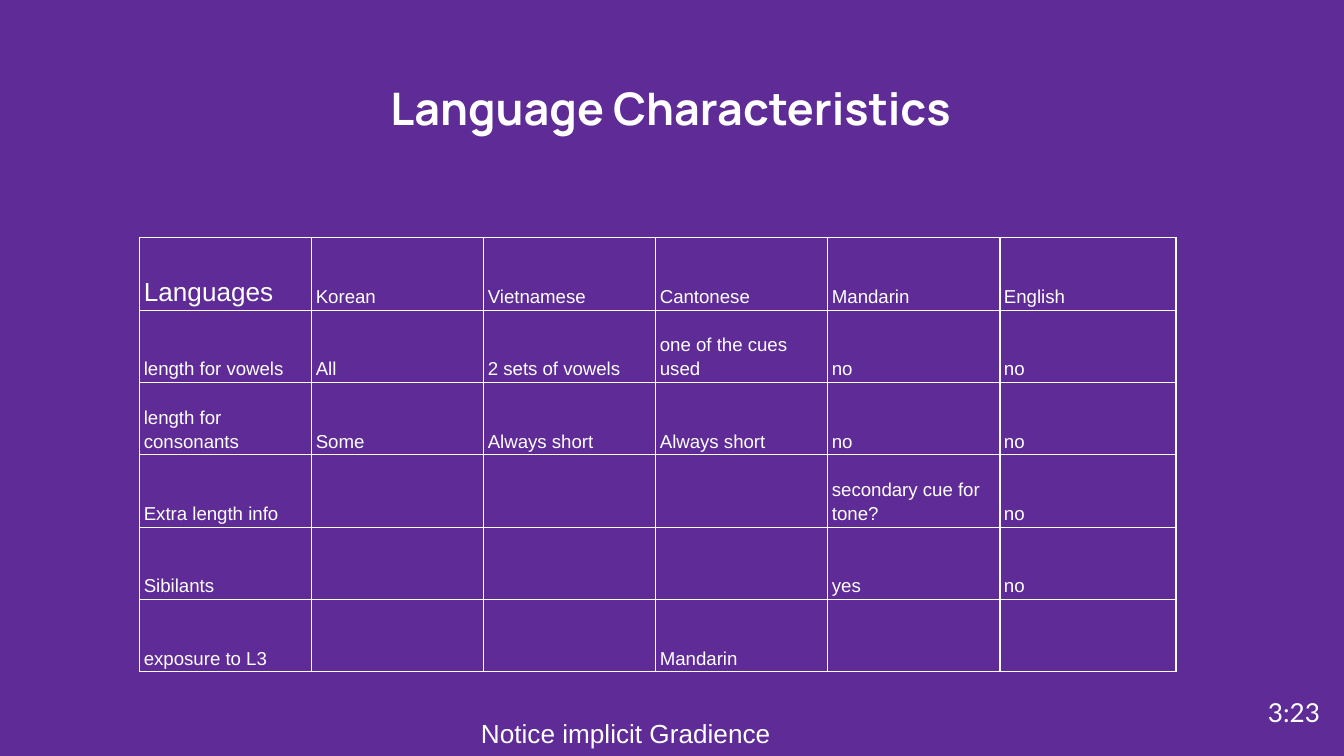
from lxml import etree
from pptx import Presentation
from pptx.dml.color import RGBColor
from pptx.enum.text import MSO_ANCHOR, PP_ALIGN
from pptx.oxml.ns import qn
from pptx.util import Inches, Pt

LEFT, CENTER, RIGHT = PP_ALIGN.LEFT, PP_ALIGN.CENTER, PP_ALIGN.RIGHT
TOP, MIDDLE, BOTTOM = MSO_ANCHOR.TOP, MSO_ANCHOR.MIDDLE, MSO_ANCHOR.BOTTOM
PURPLE, WHITE = "5E2B97", "FFFFFF"

ROWS = [
    ["Languages", "Korean", "Vietnamese", "Cantonese", "Mandarin", "English"],
    ["length for vowels", "All", "2 sets of vowels", "one of the cues used", "no", "no"],
    ["length for consonants", "Some", "Always short", "Always short", "no", "no"],
    ["Extra length info", "", "", "", "secondary cue for tone?", "no"],
    ["Sibilants", "", "", "", "yes", "no"],
    ["exposure to L3", "", "", "Mandarin", "", ""],
]
WIDTHS = [1.28] * 5 + [1.31]
TALL = 3.23


def color(value):
    return RGBColor.from_string(value)


def assign(target, values):
    for name, value in values.items():
        setattr(target, name, value)


def write(frame, text, font, size, bold=False, **layout):
    """Fill the first paragraph and set its layout."""
    para = frame.paragraphs[0]
    assign(para, layout)
    run = para.add_run()
    run.text = text
    assign(run.font, {"name": font, "size": Pt(size), "bold": bold})
    run.font.color.rgb = color(WHITE)


def add_text(slide, box, text, font, size, inset=(0.1, 0.1), anchor=TOP, **style):
    frame = slide.shapes.add_textbox(*map(Inches, box)).text_frame
    side, edge = map(Inches, inset)
    assign(frame, {
        "word_wrap": True, "vertical_anchor": anchor,
        "margin_left": side, "margin_right": side,
        "margin_top": edge, "margin_bottom": edge,
    })
    write(frame, text, font, size, **style)


def add_border(cell):
    props = cell._tc.get_or_add_tcPr()
    for index, side in enumerate(("lnL", "lnR", "lnT", "lnB")):
        line = etree.Element(qn(f"a:{side}"), w=str(Pt(0.75)))
        fill = etree.SubElement(line, qn("a:solidFill"))
        etree.SubElement(fill, qn("a:srgbClr"), val=WHITE)
        props.insert(index, line)


def fill_cell(cell, text, size):
    assign(cell, {
        "vertical_anchor": BOTTOM,
        "margin_left": Inches(0.03), "margin_right": Inches(0.03),
        "margin_top": Inches(0.02), "margin_bottom": Inches(0.02),
    })
    cell.fill.background()
    add_border(cell)
    if text:
        spacing = 1.15 if size == 10 else 1.0
        write(cell.text_frame, text, "Arial", size, line_spacing=spacing)


def add_grid(slide, left, top):
    box = map(Inches, (left, top, sum(WIDTHS), TALL))
    table = slide.shapes.add_table(len(ROWS), len(WIDTHS), *box).table
    assign(table, {"first_row": False, "horz_banding": False})
    for column, width in zip(table.columns, WIDTHS):
        column.width = Inches(width)
    for r, row in enumerate(ROWS):
        for c, text in enumerate(row):
            fill_cell(table.cell(r, c), text, 14 if r == c == 0 else 10)


def main():
    deck = Presentation()
    width = Inches(10)
    assign(deck, {"slide_width": width, "slide_height": width * 9 // 16})
    slide = deck.slides.add_slide(deck.slide_layouts[6])
    back = slide.background.fill
    back.solid()
    back.fore_color.rgb = color(PURPLE)

    add_text(slide, (0.26, 0.38, 9.46, 0.84), "Language Characteristics",
             "Manrope", 24, anchor=MIDDLE, bold=True,
             alignment=CENTER, space_after=Pt(16))
    add_grid(slide, 1.04, 1.77)
    add_text(slide, (6.7, 5.08, 3.22, 0.64), "3:23", "Lato", 14, alignment=RIGHT)
    add_text(slide, (3.48, 5.29, 4.82, 0.34), "Notice implicit Gradience",
             "Arial", 14, inset=(0.1, 0.05), alignment=LEFT)
    deck.save("out.pptx")


if __name__ == "__main__":
    main()
